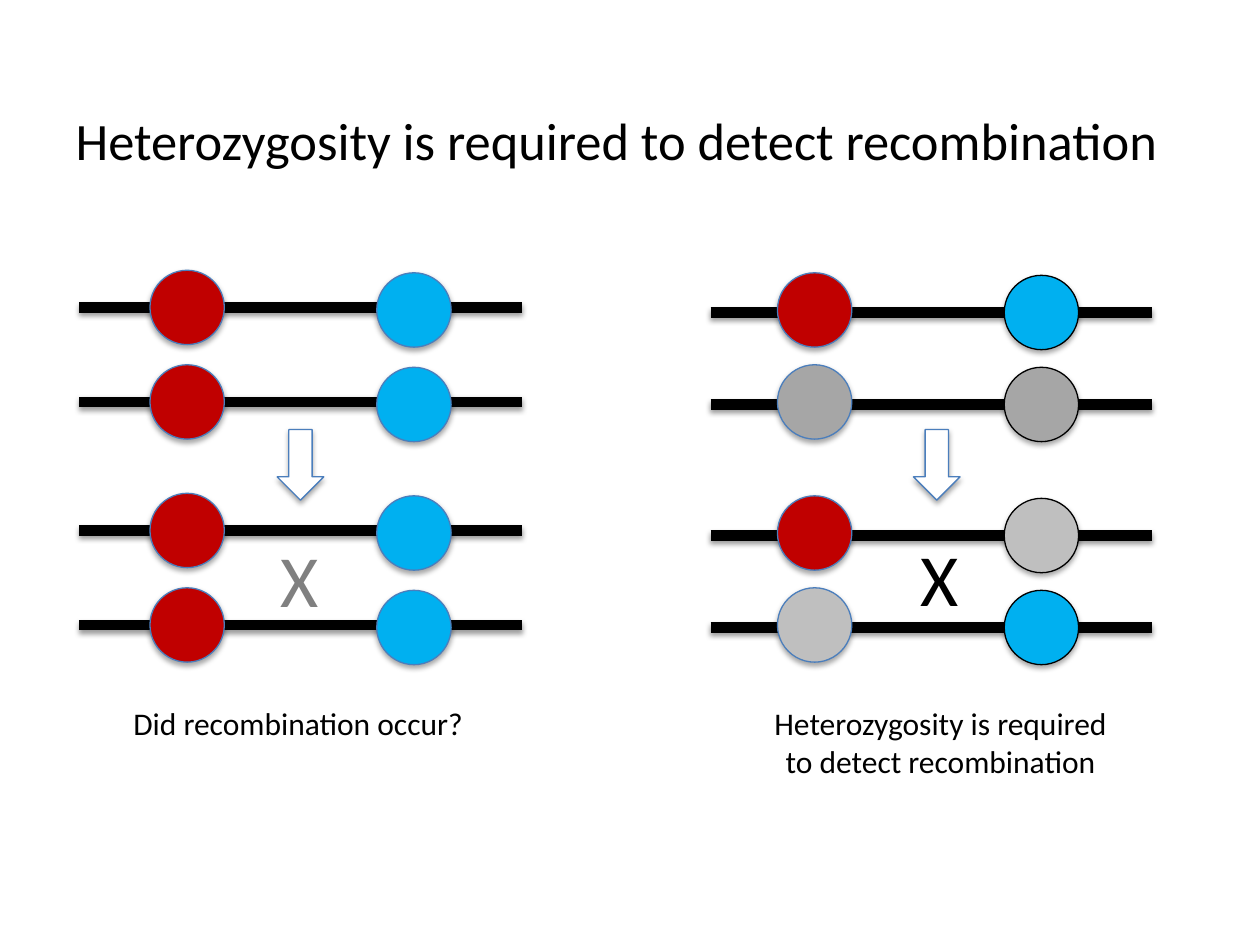
from dataclasses import dataclass

from lxml import etree
from pptx import Presentation
from pptx.dml.color import RGBColor
from pptx.enum.shapes import MSO_CONNECTOR, MSO_SHAPE
from pptx.enum.text import MSO_ANCHOR, PP_ALIGN
from pptx.oxml import parse_xml
from pptx.util import Inches, Pt

STRAIGHT = MSO_CONNECTOR.STRAIGHT
OVAL, DOWN_ARROW = MSO_SHAPE.OVAL, MSO_SHAPE.DOWN_ARROW
LEFT, CENTER = PP_ALIGN.LEFT, PP_ALIGN.CENTER
TOP = MSO_ANCHOR.TOP

FONT = "Calibri"
BLACK, WHITE, OUTLINE = "000000", "FFFFFF", "4B7EBC"
RED, BLUE, DARK_GREY, LIGHT_GREY = "C00000", "00B0F0", "A6A6A6", "BFBFBF"
MID_GREY = "808080"
DRAWING = "http://schemas.openxmlformats.org/drawingml/2006/main"

BALL = 0.59
BALL_STEP = 1.8
BALL_DROP = 0.02
GENERATION_STEP = 1.77


@dataclass
class Box:
    left: float
    top: float
    width: float
    height: float

    def lengths(self):
        return [Inches(n) for n in (self.left, self.top, self.width, self.height)]


@dataclass
class Panel:
    box: Box
    first_ball: float
    ball_shift: float
    chromatid_gap: float
    alleles: list
    second_outline: str
    arrow: Box
    cross: Box
    cross_color: str
    caption: Box
    caption_text: str
    caption_wraps: bool


def color(value):
    return RGBColor.from_string(value)


def cast_shadow(shape, distance, alpha):
    effects = parse_xml(
        f'<a:effectLst xmlns:a="{DRAWING}"><a:outerShdw blurRad="{Pt(3.1)}" '
        f'dist="{Pt(distance)}" dir="5400000" rotWithShape="0"/></a:effectLst>'
    )
    black = etree.SubElement(effects[0], f"{{{DRAWING}}}srgbClr", val=BLACK)
    etree.SubElement(black, f"{{{DRAWING}}}alpha", val=str(alpha * 1000))
    shape._element.spPr.append(effects)


def style_text(frame, text, size, text_color, align, wraps):
    frame.word_wrap = wraps
    frame.vertical_anchor = TOP
    frame.text = text
    para = frame.paragraphs[0]
    para.alignment = align
    para.font.name = FONT
    para.font.size = Pt(size)
    para.font.color.rgb = color(text_color)


def add_text(page, box, text, size, text_color, align=LEFT, wraps=False):
    frame = page.shapes.add_textbox(*box.lengths()).text_frame
    style_text(frame, text, size, text_color, align, wraps)


def add_title(page, box, text):
    title = page.shapes.title
    title.left, title.top, title.width, title.height = box.lengths()
    style_text(title.text_frame, text, 30, BLACK, LEFT, True)


def add_figure(page, kind, box, fill, outline):
    shape = page.shapes.add_shape(kind, *box.lengths())
    shape.fill.solid()
    shape.fill.fore_color.rgb = color(fill)
    shape.line.color.rgb = color(outline)
    shape.line.width = Pt(0.75)
    cast_shadow(shape, 1.8, 35)


def add_chromosome(page, panel, middle, fills):
    box = panel.box
    strand = page.shapes.add_connector(
        STRAIGHT, Inches(box.left), Inches(middle),
        Inches(box.left + box.width), Inches(middle),
    )
    strand.line.color.rgb = color(BLACK)
    strand.line.width = Pt(6)
    cast_shadow(strand, 1.6, 38)
    outlines = (OUTLINE, panel.second_outline)
    for locus, (fill, outline) in enumerate(zip(fills, outlines)):
        left = box.left + panel.first_ball + locus * BALL_STEP
        top = middle - BALL / 2 + panel.ball_shift + locus * BALL_DROP
        add_figure(page, OVAL, Box(left, top, BALL, BALL), fill, outline)


def add_panel(page, panel):
    for row, fills in enumerate(panel.alleles):
        generation, chromatid = divmod(row, 2)
        middle = (panel.box.top + generation * GENERATION_STEP
                  + chromatid * panel.chromatid_gap)
        add_chromosome(page, panel, middle, fills)
    add_figure(page, DOWN_ARROW, panel.arrow, WHITE, OUTLINE)
    add_text(page, panel.cross, "X", 42, panel.cross_color)
    align = CENTER if panel.caption_wraps else LEFT
    add_text(page, panel.caption, panel.caption_text, 18, BLACK,
             align, panel.caption_wraps)


def main():
    deck = Presentation()
    deck.slide_width, deck.slide_height = Inches(10), Inches(7.5)
    page = deck.slides.add_slide(deck.slide_layouts[5])
    message = "Heterozygosity is required to detect recombination"
    add_title(page, Box(0.5, 0.81, 8.98, 0.61), message)

    homozygous = Panel(
        box=Box(0.63, 2.44, 3.51, 2.51),
        first_ball=0.56, ball_shift=0, chromatid_gap=0.75,
        alleles=[(RED, BLUE)] * 4,
        second_outline=OUTLINE,
        arrow=Box(2.2, 3.41, 0.37, 0.56),
        cross=Box(2.13, 4.19, 0.51, 0.81), cross_color=MID_GREY,
        caption=Box(0.96, 5.54, 2.85, 0.4),
        caption_text="Did recombination occur?", caption_wraps=False,
    )
    heterozygous = Panel(
        box=Box(5.64, 2.48, 3.5, 2.49),
        first_ball=0.53, ball_shift=-0.02, chromatid_gap=0.73,
        alleles=[(RED, BLUE), (DARK_GREY, DARK_GREY),
                 (RED, LIGHT_GREY), (LIGHT_GREY, BLUE)],
        second_outline=BLACK,
        arrow=Box(7.25, 3.41, 0.37, 0.56),
        cross=Box(7.21, 4.18, 0.51, 0.81), cross_color=BLACK,
        caption=Box(6.04, 5.54, 2.85, 0.71),
        caption_text=message, caption_wraps=True,
    )
    for panel in (homozygous, heterozygous):
        add_panel(page, panel)
    deck.save("out.pptx")


if __name__ == "__main__":
    main()
